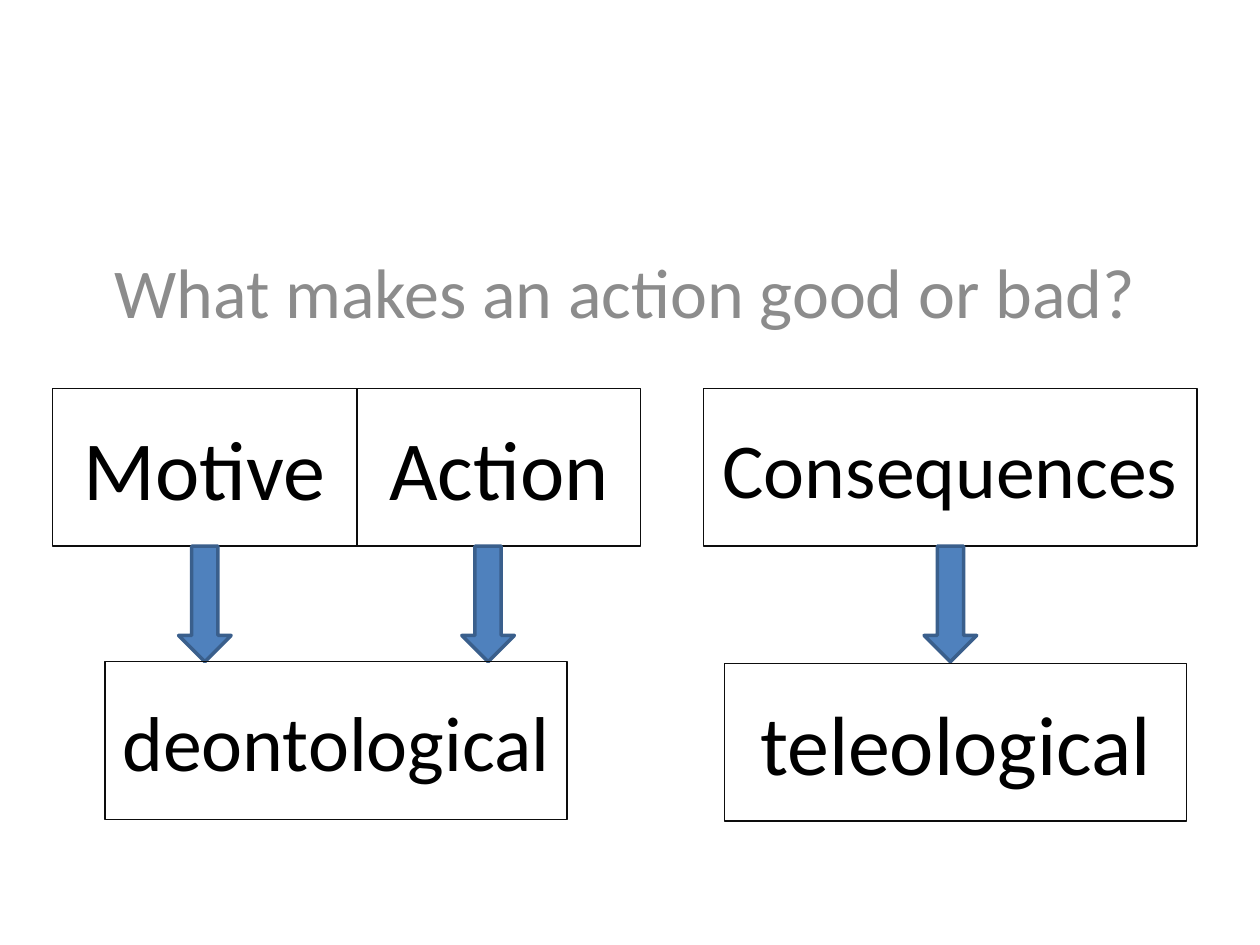
import pptx
import pptx.util
import pptx.dml.color
import pptx.enum.shapes
import pptx.enum.text
from dataclasses import dataclass

Cm = pptx.util.Cm
Pt = pptx.util.Pt
Kind = pptx.enum.shapes.MSO_SHAPE
Anchor = pptx.enum.text.MSO_ANCHOR


@dataclass(frozen=True)
class Theme:
    font: str = "Calibri"
    ink: str = "000000"
    grey: str = "8C8C8C"
    frame: str = "0D0D0D"
    blue: str = "4F81BD"
    edge: str = "3A5F8C"
    large: float = 48
    snug: float = 44.4
    lead: float = 40


class Board:
    def __init__(self, slide, theme):
        self.slide = slide
        self.theme = theme

    def color(self, code):
        return pptx.dml.color.RGBColor.from_string(code)

    def label(self, frame, words, size, code, anchor):
        frame.word_wrap = True
        frame.vertical_anchor = anchor
        para = frame.paragraphs[0]
        para.alignment = pptx.enum.text.PP_ALIGN.CENTER
        run = para.add_run()
        run.text = words
        run.font.name = self.theme.font
        run.font.size = Pt(size)
        run.font.color.rgb = self.color(code)

    def shape(self, kind, left, top, width, height, edge, weight):
        item = self.slide.shapes.add_shape(
            kind, Cm(left), Cm(top), Cm(width), Cm(height))
        item.shadow.inherit = False
        item.line.color.rgb = self.color(edge)
        item.line.width = Pt(weight)
        return item

    def text(self, words, left, top, width, height):
        item = self.slide.shapes.add_textbox(
            Cm(left), Cm(top), Cm(width), Cm(height))
        self.label(item.text_frame, words, self.theme.lead,
                   self.theme.grey, Anchor.TOP)

    def box(self, words, size, left, top, width, height=3.18):
        item = self.shape(Kind.RECTANGLE, left, top, width, height,
                          self.theme.frame, 0.75)
        item.fill.background()
        self.label(item.text_frame, words, size, self.theme.ink, Anchor.MIDDLE)

    def arrow(self, left, top, width=1.06, height=2.33):
        item = self.shape(Kind.DOWN_ARROW, left, top, width, height,
                          self.theme.edge, 2)
        item.fill.solid()
        item.fill.fore_color.rgb = self.color(self.theme.blue)


def main():
    deck = pptx.Presentation()
    deck.slide_width = Cm(25.4)
    deck.slide_height = Cm(19.05)
    theme = Theme()
    board = Board(deck.slides.add_slide(deck.slide_layouts[6]), theme)

    # Question
    board.text("What makes an action good or bad?", 1.91, 4.88, 21.38, 2.96)

    # What is judged
    for words, size, left, width in (
        ("Motive", theme.large, 1.06, 6.14),
        ("Action", theme.large, 7.2, 5.72),
        ("Consequences", theme.snug, 14.18, 9.95),
    ):
        board.box(words, size, left, 7.83, width)

    # Arrows down to the theories
    for left in (3.6, 9.31, 18.63):
        board.arrow(left, 11.01)

    # Kinds of theory
    board.box("deontological", theme.snug, 2.12, 13.34, 9.31)
    board.box("teleological", theme.large, 14.61, 13.37, 9.31)

    deck.save("out.pptx")


if __name__ == "__main__":
    main()
